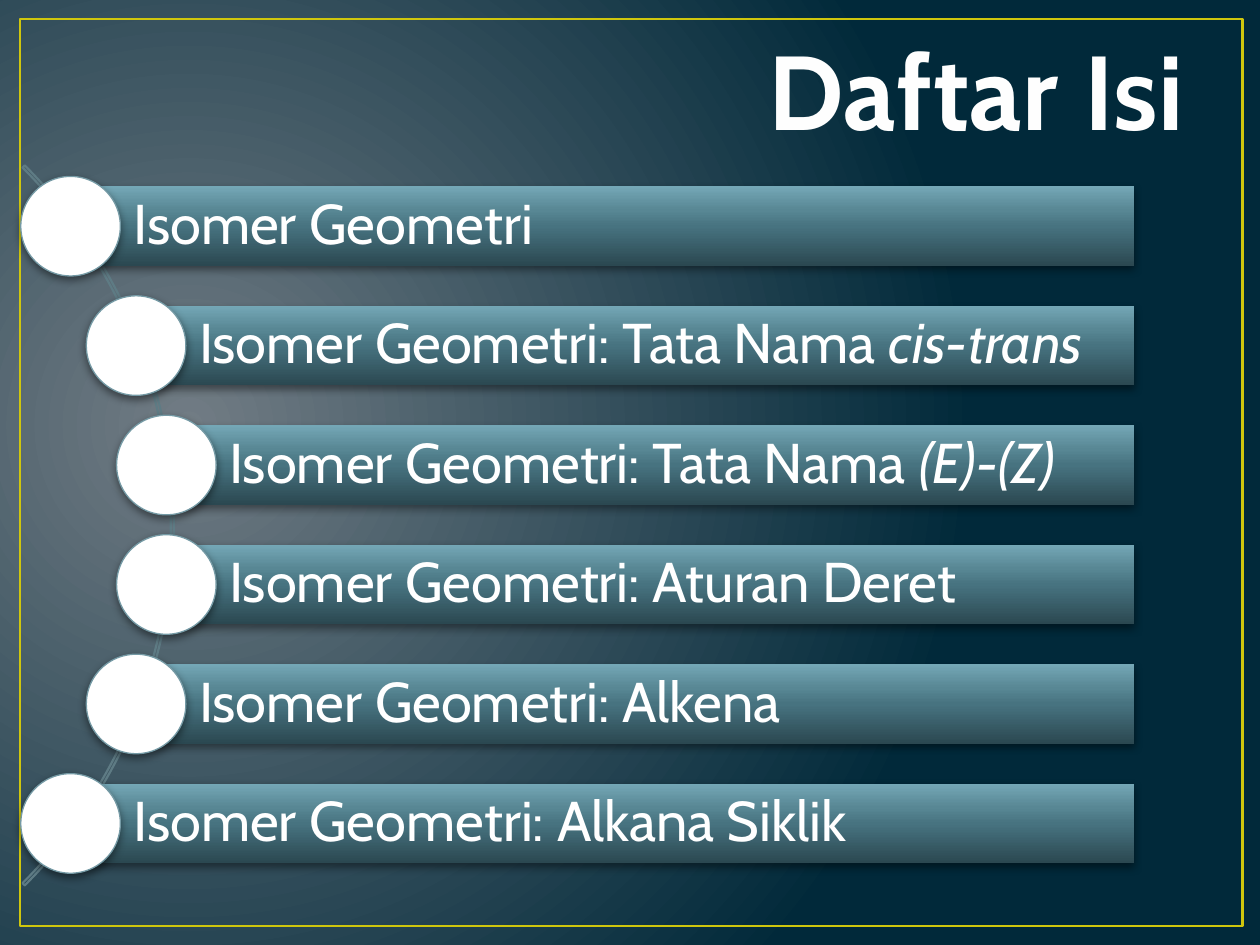
from lxml import etree
from pptx import Presentation
from pptx.dml.color import RGBColor
from pptx.enum.shapes import MSO_SHAPE
from pptx.enum.text import MSO_ANCHOR, PP_ALIGN
from pptx.oxml import parse_xml
from pptx.oxml.ns import nsdecls, qn
from pptx.util import Inches, Pt

FONT = "Cabin"
TITLE = "Daftar Isi"
# left edge of the bar, plain text, italic text
TOPICS = [
    (0.56, "Isomer Geometri", ""),
    (1.08, "Isomer Geometri: Tata Nama ", "cis-trans"),
    (1.32, "Isomer Geometri: Tata Nama ", "(E)-(Z)"),
    (1.32, "Isomer Geometri: Aturan Deret", ""),
    (1.08, "Isomer Geometri: Alkena", ""),
    (0.56, "Isomer Geometri: Alkana Siklik", ""),
]
BAR_STOPS = [(0, "2B4851"), (50, "477380"), (70, "588794"), (100, "74A7B6")]
BACKGROUND_STOPS = [(0, "717C84"), (100, "01293A")]
BAR_TOP, BAR_PITCH, BAR_HEIGHT, BAR_RIGHT = 1.48, 0.948, 0.63, 9.0
DOT = 0.79


def rgb(color):
    return RGBColor.from_string(color)


def set_gradient(fill, owner, stops, direction):
    """Give fill, found inside the XML element owner, these stops and direction."""
    fill.gradient()
    grad = owner.find(".//" + qn("a:gradFill"))
    for child in list(grad):
        grad.remove(child)
    stop_list = etree.SubElement(grad, qn("a:gsLst"))
    for position, color in stops:
        stop = etree.SubElement(stop_list, qn("a:gs"), pos=str(position * 1000))
        etree.SubElement(stop, qn("a:srgbClr"), val=color)
    grad.append(parse_xml(direction))


def add_shadow(sp):
    sp._element.spPr.append(parse_xml(
        f'<a:effectLst {nsdecls("a")}><a:outerShdw blurRad="{Pt(5)}" dist="{Pt(2)}" '
        'dir="5400000" rotWithShape="0"><a:srgbClr val="000000"><a:alpha val="43000"/>'
        '</a:srgbClr></a:outerShdw></a:effectLst>'))


def add_shape(s, kind, box, line=None, width=1, shadow=False):
    sp = s.shapes.add_shape(kind, *map(Inches, box))
    sp.fill.background()
    if line:
        sp.line.color.rgb = rgb(line)
        sp.line.width = Pt(width)
    else:
        sp.line.fill.background()
    if shadow:
        add_shadow(sp)
    else:
        sp.shadow.inherit = False
    return sp


def add_run(p, text, size, color, bold=False, italic=False):
    r = p.add_run()
    r.text = text
    r.font.name, r.font.size = FONT, Pt(size)
    r.font.bold, r.font.italic = bold, italic
    r.font.color.rgb = rgb(color)
    return r


def add_topic(s, top, left, plain, italic):
    bar = add_shape(s, MSO_SHAPE.RECTANGLE,
                    (left, top, BAR_RIGHT - left, BAR_HEIGHT), shadow=True)
    set_gradient(bar.fill, bar._element, BAR_STOPS,
                 f'<a:lin {nsdecls("a")} ang="16200000" scaled="0"/>')
    tf = bar.text_frame
    tf.word_wrap = True
    tf.vertical_anchor = MSO_ANCHOR.MIDDLE
    tf.margin_left = Inches(0.5)
    tf.margin_right = tf.margin_top = tf.margin_bottom = Inches(0.09)
    p = tf.paragraphs[0]
    p.alignment = PP_ALIGN.LEFT
    p.line_spacing = 0.9
    add_run(p, plain, 32, "FFFFFF")
    if italic:
        add_run(p, italic, 32, "FFFFFF", italic=True)

    dot = add_shape(s, MSO_SHAPE.OVAL,
                    (left - DOT / 2, top + (BAR_HEIGHT - DOT) / 2, DOT, DOT),
                    "759AA5", 0.75, shadow=True)
    dot.fill.solid()
    dot.fill.fore_color.rgb = rgb("FFFFFF")


def add_title(s):
    tf = s.shapes.add_textbox(*map(Inches, (0.5, 0, 9, 1.25))).text_frame
    tf.word_wrap = True
    tf.vertical_anchor = MSO_ANCHOR.BOTTOM
    p = tf.paragraphs[0]
    p.alignment = PP_ALIGN.RIGHT
    r = add_run(p, TITLE, 60, "FEFEFE", bold=True)
    props = r.font._element
    props.set("spc", "50")
    props.insert(0, parse_xml(
        f'<a:ln {nsdecls("a")} w="{Pt(1.05)}"><a:solidFill><a:srgbClr val="384F55"/>'
        '</a:solidFill></a:ln>'))


def main():
    prs = Presentation()
    prs.slide_width, prs.slide_height = Inches(10), Inches(7.5)
    s = prs.slides.add_slide(prs.slide_layouts[6])
    set_gradient(s.background.fill, s._element, BACKGROUND_STOPS,
                 f'<a:path {nsdecls("a")} path="circle">'
                 '<a:fillToRect l="15000" t="50000" r="85000" b="60000"/></a:path>')

    add_shape(s, MSO_SHAPE.RECTANGLE, (0.16, 0.15, 9.7, 7.2), "CFC60D", 1.5)
    arc = add_shape(s, MSO_SHAPE.BLOCK_ARC, (-6.7, 0.13, 8.08, 8.08), "5E7B84", 1.25)
    for i, value in enumerate((189, 27, 0.003)):
        arc.adjustments[i] = value

    for i, topic in enumerate(TOPICS):
        add_topic(s, BAR_TOP + i * BAR_PITCH, *topic)
    add_title(s)
    prs.save("out.pptx")


if __name__ == "__main__":
    main()
